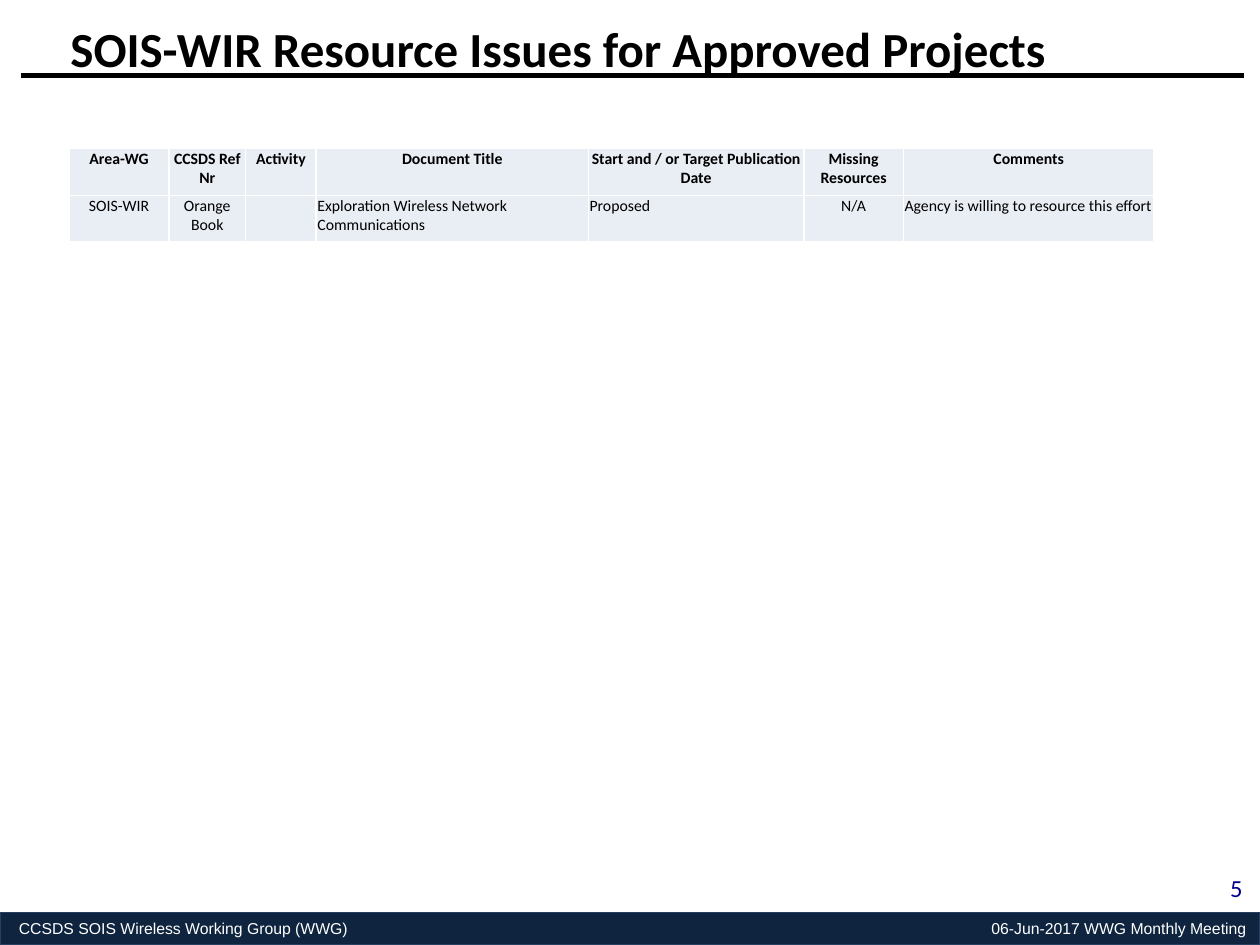
from dataclasses import dataclass

from lxml import etree
from pptx import Presentation
from pptx.dml.color import RGBColor
from pptx.enum.shapes import MSO_CONNECTOR, MSO_SHAPE
from pptx.enum.text import MSO_ANCHOR, PP_ALIGN
from pptx.oxml.ns import qn
from pptx.util import Inches, Pt

LEFT, CENTER, RIGHT = PP_ALIGN.LEFT, PP_ALIGN.CENTER, PP_ALIGN.RIGHT
TOP, MIDDLE = MSO_ANCHOR.TOP, MSO_ANCHOR.MIDDLE
RECTANGLE, STRAIGHT = MSO_SHAPE.RECTANGLE, MSO_CONNECTOR.STRAIGHT


@dataclass(frozen=True)
class Theme:
    black: str = "000000"
    white: str = "FFFFFF"
    cell: str = "E9EDF4"
    bar: str = "0F243E"
    bar_edge: str = "254061"
    number: str = "000090"
    body_font: str = "Calibri"
    footer_font: str = "Arial"
    title_size: int = 28
    number_size: int = 14
    small_size: int = 9


THEME = Theme()
COLUMN_WIDTHS = [0.79, 0.61, 0.56, 2.16, 1.71, 0.79, 1.99]
COLUMN_ALIGNS = [CENTER, CENTER, CENTER, LEFT, LEFT, CENTER, LEFT]
ROWS = [
    ["Area-WG", "CCSDS Ref Nr", "Activity", "Document Title",
     "Start and / or Target Publication Date", "Missing Resources", "Comments"],
    ["SOIS-WIR", "Orange Book", "", "Exploration Wireless Network Communications",
     "Proposed", "N/A", "Agency is willing to resource this effort"],
]


def color(value):
    return RGBColor.from_string(value)


def write(frame, text, size, ink, align=LEFT, bold=False, font=THEME.body_font,
          margins=(0.1, 0.05, 0.1, 0.05), anchor=TOP):
    """Fill a text frame with one formatted paragraph and return it."""
    frame.word_wrap = True
    frame.vertical_anchor = anchor
    for side, margin in zip(("left", "top", "right", "bottom"), margins):
        setattr(frame, f"margin_{side}", Inches(margin))
    para = frame.paragraphs[0]
    para.text = text
    para.alignment = align
    for name, value in {"size": Pt(size), "bold": bold, "name": font}.items():
        setattr(para.font, name, value)
    para.font.color.rgb = color(ink)
    return para


def add_title(page, box, text):
    title = page.shapes.add_textbox(*map(Inches, box))
    para = write(title.text_frame, text, THEME.title_size, THEME.black, bold=True,
                 margins=(0.56, 0.06, 0.06, 0.06))
    para.line_spacing = 0.9

    # Rule under the title
    left, top, width, _ = box
    rule_y = Inches(top + 0.46)
    rule = page.shapes.add_connector(STRAIGHT, Inches(left + 0.17), rule_y,
                                     Inches(left + width - 0.16), rule_y)
    rule.line.color.rgb = color(THEME.black)
    rule.line.width = Pt(2.5)
    etree.SubElement(rule._element.spPr, qn("a:effectLst"))


def add_cell_borders(cell):
    properties = cell._tc.get_or_add_tcPr()
    for position, side in enumerate(("lnL", "lnR", "lnT", "lnB")):
        edge = etree.Element(qn(f"a:{side}"), w=str(Pt(1)))
        fill = etree.SubElement(edge, qn("a:solidFill"))
        etree.SubElement(fill, qn("a:srgbClr"), val=THEME.white)
        properties.insert(position, edge)


def add_issue_table(page, box):
    height = box[3]
    table = page.shapes.add_table(len(ROWS), len(COLUMN_WIDTHS), *map(Inches, box)).table
    for column, width in zip(table.columns, COLUMN_WIDTHS):
        column.width = Inches(width)
    for row_index, texts in enumerate(ROWS):
        header = row_index == 0
        table.rows[row_index].height = Inches(height / len(ROWS))
        for column_index, text in enumerate(texts):
            cell = table.cell(row_index, column_index)
            write(cell.text_frame, text, THEME.small_size, THEME.black, bold=header,
                  align=CENTER if header else COLUMN_ALIGNS[column_index])
            for side, margin in {"left": 0.01, "top": 0.01, "right": 0.01, "bottom": 0}.items():
                setattr(cell, f"margin_{side}", Inches(margin))
            cell.vertical_anchor = TOP
            cell.fill.solid()
            cell.fill.fore_color.rgb = color(THEME.cell)
            add_cell_borders(cell)


def add_footer(page, box, group, meeting):
    bar = page.shapes.add_shape(RECTANGLE, *map(Inches, box))
    bar.shadow.inherit = False
    bar.fill.solid()
    bar.fill.fore_color.rgb = color(THEME.bar)
    bar.line.color.rgb = color(THEME.bar_edge)
    bar.line.width = Pt(0.75)
    para = write(bar.text_frame, f"{group}\t{meeting}", THEME.small_size, THEME.white,
                 font=THEME.footer_font, margins=(0.15, 0.06, 0.1, 0.06), anchor=MIDDLE)

    # Right tab stop carries the meeting name to the far edge
    properties = para._p.get_or_add_pPr()
    stops = etree.Element(qn("a:tabLst"))
    etree.SubElement(stops, qn("a:tab"), pos=str(Inches(box[2] - 0.26)), algn="r")
    properties.insert(0, stops)


def add_page_number(page, box, number):
    label = page.shapes.add_textbox(*map(Inches, box))
    write(label.text_frame, number, THEME.number_size, THEME.number, align=RIGHT)


def main():
    deck = Presentation()
    deck.slide_width, deck.slide_height = Inches(10), Inches(7.5)
    page = deck.slides.add_slide(deck.slide_layouts[6])
    add_footer(page, (0, 7.24, 10, 0.26), "CCSDS SOIS Wireless Working Group (WWG)",
               "06-Jun-2017 WWG Monthly Meeting")
    add_page_number(page, (9.3, 6.88, 0.66, 0.35), "5")
    add_title(page, (0, 0.14, 10.03, 0.58), "SOIS-WIR Resource Issues for Approved Projects")
    add_issue_table(page, (0.55, 1.18, sum(COLUMN_WIDTHS), 0.74))
    deck.save("out.pptx")


if __name__ == "__main__":
    main()
